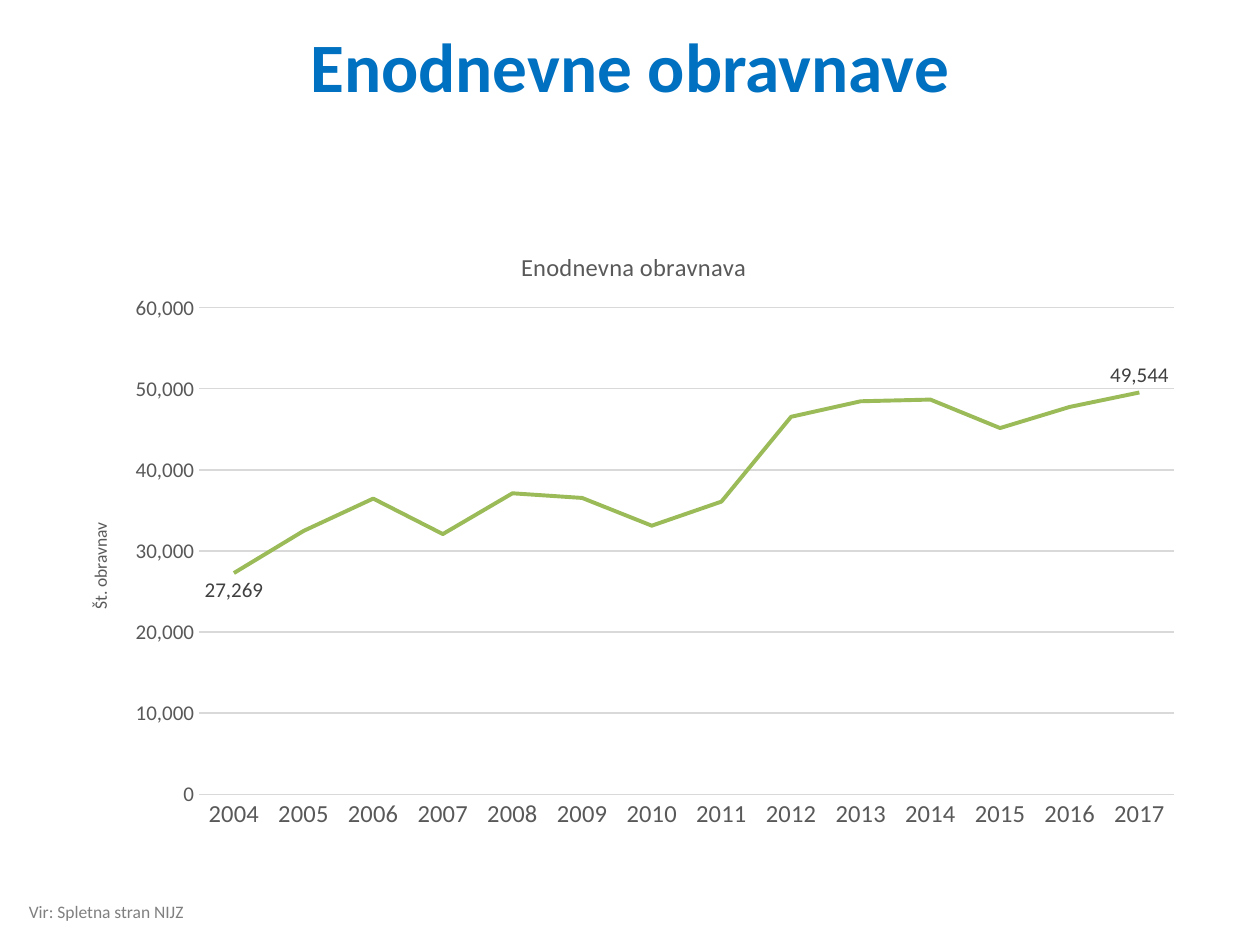
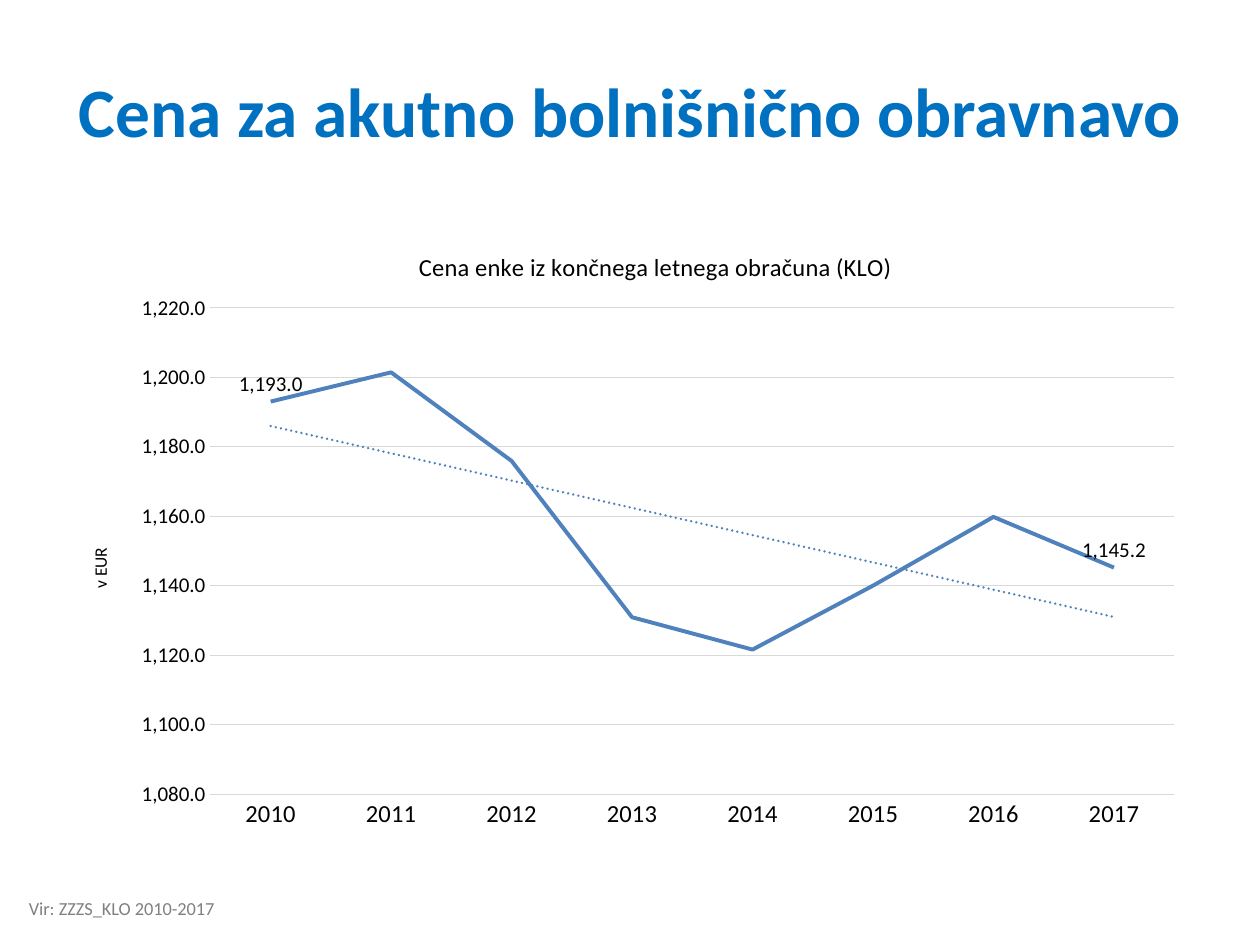
import dataclasses
import typing

import lxml.etree
import pptx
import pptx.chart.data
import pptx.dml.color
import pptx.enum.chart
import pptx.enum.text
import pptx.oxml
import pptx.oxml.ns
import pptx.util

Pt = pptx.util.Pt
Place = pptx.enum.chart.XL_LABEL_POSITION
Anchor = pptx.enum.text.MSO_ANCHOR
qn = pptx.oxml.ns.qn


@dataclasses.dataclass(frozen=True)
class Theme:
    font: str = "Calibri"
    title: str = "0070C0"
    source: str = "808080"
    grid: str = "D9D9D9"
    head_size: float = 39.6
    large: float = 14
    mid: float = 12
    small: float = 10
    thin: float = 0.75
    thick: float = 2.25


class Box(typing.NamedTuple):
    left: float
    top: float
    width: float
    height: float


class Spot(typing.NamedTuple):
    x: float
    y: float


@dataclasses.dataclass(frozen=True)
class Graph:
    title: str
    title_at: Spot
    unit: str
    unit_at: Spot
    plot: Box
    name: str
    start: int
    values: tuple[float, ...]
    low: float
    high: float
    step: float
    form: str
    line: str
    ink: str
    label_ink: str
    first: Place
    trend: bool = False


@dataclasses.dataclass(frozen=True)
class Page:
    title: str
    title_box: Box
    anchor: Anchor
    source: str
    source_box: Box
    source_size: float
    graph: Graph


THEME = Theme()
CHART_BOX = Box(36, 126, 648, 356.4)

PAGES = (
    Page(
        "Enodnevne obravnave", Box(49.7, 9.4, 620.6, 104.4), Anchor.TOP,
        "Vir: Spletna stran NIJZ", Box(9.4, 511.2, 222.5, 19.4), 10,
        Graph(
            title="Enodnevna obravnava", title_at=Spot(0.4, 0.04),
            unit="Št. obravnav", unit_at=Spot(0.02, 0.48),
            plot=Box(0.12, 0.14, 0.86, 0.78),
            name="Enodnevna obravnava", start=2004,
            values=(27269, 32469, 36457, 32079, 37115, 36539, 33118,
                    36087, 46548, 48462, 48674, 45159, 47764, 49544),
            low=0, high=60000, step=10000, form="#,##0",
            line="9BBB59", ink="595959", label_ink="404040",
            first=Place.BELOW,
        ),
    ),
    Page(
        "Cena za akutno bolnišnično obravnavo",
        Box(34.6, 10.8, 650.9, 104.4), Anchor.MIDDLE,
        "Vir: ZZZS_KLO 2010-2017", Box(9.4, 509, 149.8, 20.2), 10.5,
        Graph(
            title="Cena enke iz končnega letnega obračuna (KLO)",
            title_at=Spot(0.31, 0.04),
            unit="v EUR", unit_at=Spot(0.02, 0.52),
            plot=Box(0.13, 0.14, 0.85, 0.78),
            name="Series 1", start=2010,
            values=(1193.0, 1201.4, 1175.9, 1130.9,
                    1121.6, 1140.0, 1159.8, 1145.2),
            low=1080, high=1220, step=20, form="#,##0.0",
            line="4F81BD", ink="000000", label_ink="000000",
            first=Place.ABOVE, trend=True,
        ),
    ),
)


def shade(code: str) -> pptx.dml.color.RGBColor:
    return pptx.dml.color.RGBColor.from_string(code)


def style(font, size: float, ink: str, bold: bool = False) -> None:
    font.name = THEME.font
    font.size = Pt(size)
    font.bold = bold
    font.color.rgb = shade(ink)


def stroke(line, ink: str, width: float) -> None:
    line.color.rgb = shade(ink)
    line.width = Pt(width)


def write(frame, text: str, size: float, ink: str, bold: bool = False) -> None:
    run = frame.paragraphs[0].add_run()
    run.text = text
    style(run.font, size, ink, bold)


def place(shape, box: Box) -> None:
    shape.left, shape.top, shape.width, shape.height = map(Pt, box)


def set_spot(node, index: int, spot: Spot | Box) -> None:
    for old in node.findall(qn("c:layout")):
        node.remove(old)
    layout = pptx.oxml.parse_xml(
        f'<c:layout {pptx.oxml.ns.nsdecls("c")}><c:manualLayout/></c:layout>')
    manual = layout[0]
    inner = isinstance(spot, Box)
    parts = [("layoutTarget", "inner")] if inner else []
    parts += [("xMode", "edge"), ("yMode", "edge")]
    parts += zip(("x", "y", "w", "h"), spot)
    for tag, value in parts:
        lxml.etree.SubElement(manual, qn(f"c:{tag}")).set("val", str(value))
    node.insert(index, layout)


def add_trend(series, ink: str) -> None:
    trend = pptx.oxml.parse_xml(
        f'<c:trendline {pptx.oxml.ns.nsdecls("c", "a")}>'
        f'<c:spPr><a:ln w="{Pt(1.5)}" cap="rnd"><a:solidFill>'
        f'<a:srgbClr val="{ink}"/></a:solidFill>'
        '<a:prstDash val="sysDot"/></a:ln></c:spPr>'
        '<c:trendlineType val="linear"/><c:dispRSqr val="0"/>'
        '<c:dispEq val="0"/></c:trendline>')
    series._element.find(qn("c:cat")).addprevious(trend)


def draw_axes(chart, graph: Graph) -> None:
    years, scale = chart.category_axis, chart.value_axis
    for axis, size in ((years, THEME.large), (scale, THEME.mid)):
        axis.major_tick_mark = pptx.enum.chart.XL_TICK_MARK.NONE
        axis.minor_tick_mark = pptx.enum.chart.XL_TICK_MARK.NONE
        style(axis.tick_labels.font, size, graph.ink)
    stroke(years.format.line, THEME.grid, THEME.thin)
    scale.format.line.fill.background()
    scale.has_major_gridlines = True
    stroke(scale.major_gridlines.format.line, THEME.grid, THEME.thin)
    scale.minimum_scale = graph.low
    scale.maximum_scale = graph.high
    scale.major_unit = graph.step
    scale.tick_labels.number_format = graph.form
    scale.tick_labels.number_format_is_linked = False
    title = scale.axis_title
    write(title.text_frame, graph.unit, THEME.small, graph.ink)
    body = title.text_frame._txBody.bodyPr
    body.set("rot", "-5400000")
    body.set("vert", "horz")
    set_spot(title._element, 1, graph.unit_at)


def draw_series(chart, graph: Graph) -> None:
    plot = chart.plots[0]
    plot.vary_by_categories = False
    series = plot.series[0]
    series.smooth = False
    series.marker.style = pptx.enum.chart.XL_MARKER_STYLE.NONE
    stroke(series.format.line, graph.line, THEME.thick)
    series.data_labels.show_value = False
    last = len(graph.values) - 1
    for index, side in ((0, graph.first), (last, Place.ABOVE)):
        label = series.points[index].data_label
        style(label.font, THEME.mid, graph.label_ink)
        label.position = side
    if graph.trend:
        add_trend(series, graph.line)


def draw_graph(slide, graph: Graph) -> None:
    data = pptx.chart.data.CategoryChartData(number_format=graph.form)
    data.categories = [str(graph.start + i) for i in range(len(graph.values))]
    data.add_series(graph.name, graph.values)
    chart = slide.shapes.add_chart(
        pptx.enum.chart.XL_CHART_TYPE.LINE, *map(Pt, CHART_BOX), data).chart
    style(chart.font, THEME.small, "000000")
    chart.has_legend = False
    chart.has_title = True
    title = chart.chart_title
    write(title.text_frame, graph.title, THEME.large, graph.ink)
    set_spot(title._element, 1, graph.title_at)
    set_spot(chart._chartSpace.chart.plotArea, 0, graph.plot)
    draw_axes(chart, graph)
    draw_series(chart, graph)


def draw_page(deck, page: Page) -> None:
    slide = deck.slides.add_slide(deck.slide_layouts[5])
    title = slide.shapes.title
    place(title, page.title_box)
    frame = title.text_frame
    frame.word_wrap = True
    frame.vertical_anchor = page.anchor
    frame.paragraphs[0].alignment = pptx.enum.text.PP_ALIGN.CENTER
    write(frame, page.title, THEME.head_size, THEME.title, True)
    note = slide.shapes.add_textbox(*map(Pt, page.source_box)).text_frame
    note.word_wrap = True
    note.auto_size = pptx.enum.text.MSO_AUTO_SIZE.SHAPE_TO_FIT_TEXT
    write(note, page.source, page.source_size, THEME.source)
    draw_graph(slide, page.graph)


def main() -> None:
    deck = pptx.Presentation()
    deck.slide_width, deck.slide_height = Pt(720), Pt(540)
    for page in PAGES:
        draw_page(deck, page)
    deck.save("out.pptx")


if __name__ == "__main__":
    main()
